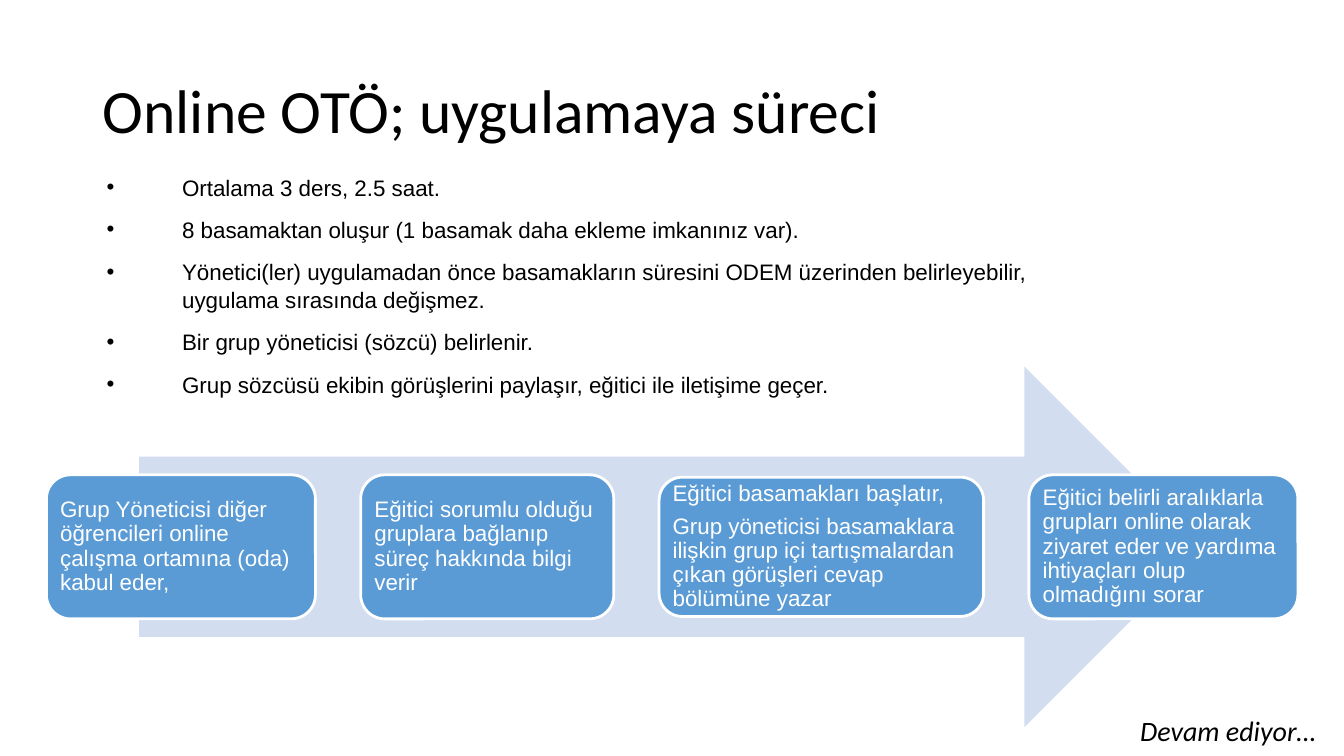
from lxml.etree import SubElement
from pptx import Presentation
from pptx.dml.color import RGBColor
from pptx.enum.shapes import MSO_SHAPE
from pptx.enum.text import MSO_ANCHOR, PP_ALIGN
from pptx.oxml.ns import qn
from pptx.util import Cm, Pt

BLACK = RGBColor(0x00, 0x00, 0x00)
WHITE = RGBColor(0xFF, 0xFF, 0xFF)
STEP_BLUE = RGBColor(0x5B, 0x9B, 0xD5)
ARROW_BLUE = RGBColor(0xD2, 0xDE, 0xEF)

RULES = [
    "Ortalama 3 ders, 2.5 saat.",
    "8 basamaktan oluşur (1 basamak daha ekleme imkanınız var).",
    "Yönetici(ler) uygulamadan önce basamakların süresini ODEM üzerinden "
    "belirleyebilir, uygulama sırasında değişmez.",
    "Bir grup yöneticisi (sözcü) belirlenir.",
    "Grup sözcüsü ekibin görüşlerini paylaşır, eğitici ile iletişime geçer.",
]
STEPS = [
    (6.78, 3.63, ["Grup Yöneticisi diğer öğrencileri online çalışma ortamına (oda) "
                  "kabul eder,"]),
    (6.38, 3.63, ["Eğitici sorumlu olduğu gruplara bağlanıp süreç hakkında bilgi verir"]),
    (8.18, 3.51, ["Eğitici basamakları başlatır,",
                  "Grup yöneticisi basamaklara ilişkin grup içi tartışmalardan çıkan "
                  "görüşleri cevap bölümüne yazar"]),
    (6.78, 3.63, ["Eğitici belirli aralıklarla grupları online olarak ziyaret eder ve "
                  "yardıma ihtiyaçları olup olmadığını sorar"]),
]
STEP_LEFT, STEP_GAP = 1.17, 1.14
FLOW_MIDDLE = 13.78


def write_paragraphs(frame, lines, font_name, size, color, spacing):
    """Fill a text frame with equally styled paragraphs and return them."""
    frame.word_wrap = True
    frame.text = "\n".join(lines)
    for paragraph in frame.paragraphs:
        paragraph.alignment = PP_ALIGN.LEFT
        paragraph.line_spacing = spacing
        paragraph.font.name = font_name
        paragraph.font.size = Pt(size)
        paragraph.font.color.rgb = color
    return frame.paragraphs


def add_text(slide, left, top, width, height, lines, font_name, size, spacing):
    """Add a black text box and return its text frame."""
    frame = slide.shapes.add_textbox(Cm(left), Cm(top), Cm(width), Cm(height)).text_frame
    write_paragraphs(frame, lines, font_name, size, BLACK, spacing)
    return frame


def add_bullet(paragraph):
    """Give a paragraph a round bullet with a hanging indent."""
    paragraph.space_before = Pt(10)
    properties = paragraph._p.get_or_add_pPr()
    properties.set("marL", str(Cm(2)))
    properties.set("indent", str(-Cm(1.9)))
    font = SubElement(properties, qn("a:buFont"), typeface="Arial")
    font.addnext(properties.makeelement(qn("a:buChar"), {"char": "•"}))
    properties.append(properties.find(qn("a:defRPr")))


def add_block(slide, preset, left, width, height, color):
    """Add a filled shape centred on the middle line of the flow."""
    block = slide.shapes.add_shape(
        preset, Cm(left), Cm(FLOW_MIDDLE - height / 2), Cm(width), Cm(height))
    block.shadow.inherit = False
    block.fill.solid()
    block.fill.fore_color.rgb = color
    block.line.fill.background()
    return block


def add_step(slide, left, width, height, lines):
    """Add one rounded step of the flow with its text."""
    step = add_block(slide, MSO_SHAPE.ROUNDED_RECTANGLE, left, width, height, STEP_BLUE)
    step.line.color.rgb = WHITE
    step.line.width = Pt(2)
    frame = step.text_frame
    frame.vertical_anchor = MSO_ANCHOR.MIDDLE
    frame.margin_left = frame.margin_right = Cm(0.17)
    frame.margin_top = frame.margin_bottom = Cm(0.17)
    for paragraph in write_paragraphs(frame, lines, "Arial", 16, WHITE, 0.9):
        paragraph.space_after = Pt(6.4)


def main():
    """Build the slide and save it."""
    presentation = Presentation()
    presentation.slide_width, presentation.slide_height = Cm(33.87), Cm(19.05)
    slide = presentation.slides.add_slide(presentation.slide_layouts[6])

    title = add_text(slide, 2.34, 1.02, 29.21, 3.68,
                     ["Online OTÖ; uygulamaya süreci"], "Calibri", 44, 0.9)
    title.vertical_anchor = MSO_ANCHOR.MIDDLE

    rules = add_text(slide, 2.34, 4.22, 24.26, 5.92, RULES, "Arial", 16, 1.05)
    for paragraph in rules.paragraphs:
        add_bullet(paragraph)

    add_block(slide, MSO_SHAPE.RIGHT_ARROW, 3.51, 26.85, 9.09, ARROW_BLUE)
    left = STEP_LEFT
    for width, height, lines in STEPS:
        add_step(slide, left, width, height, lines)
        left += width + STEP_GAP

    footer = add_text(slide, 3.02, 17.42, 30.4, 0.86, ["Devam ediyor…"], "Calibri", 20, 1.5)
    closing = footer.paragraphs[0]
    closing.alignment = PP_ALIGN.RIGHT
    closing.space_before = Pt(10)
    closing.font.italic = True

    presentation.save("out.pptx")


if __name__ == "__main__":
    main()
